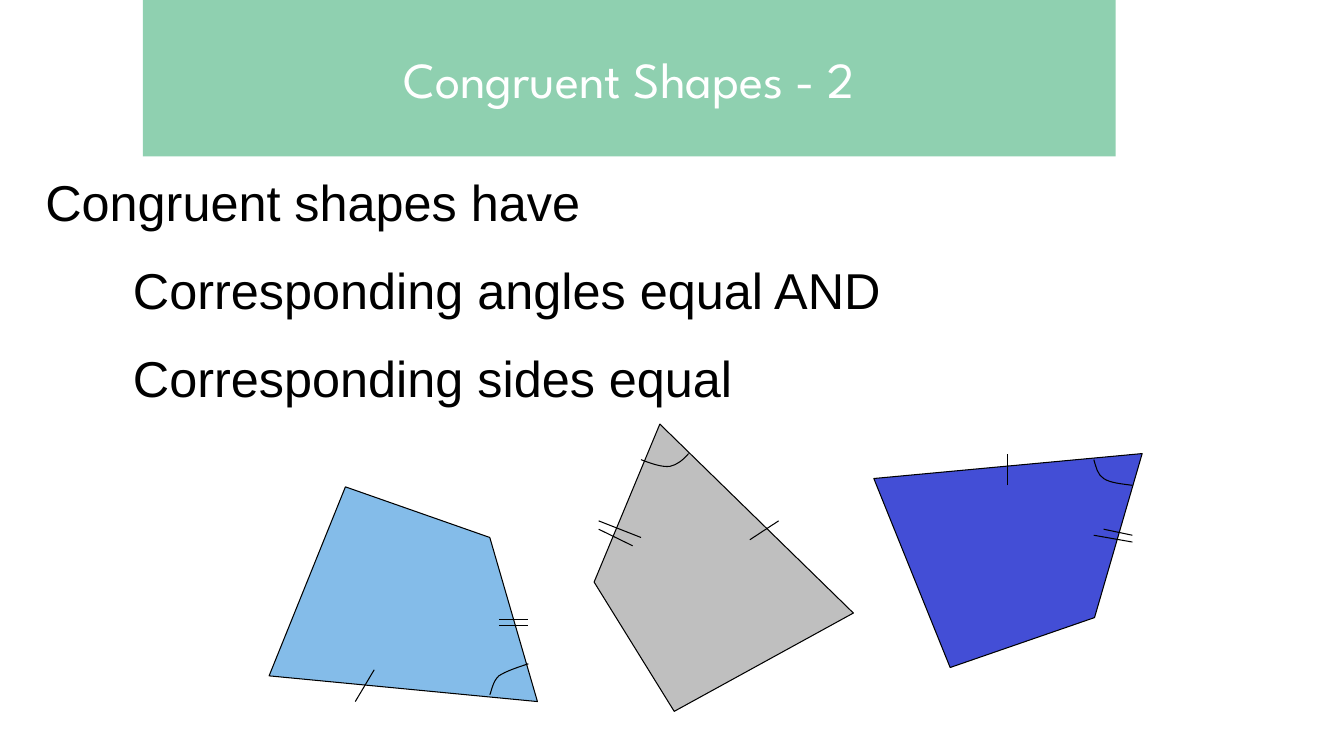
"""Build a slide on congruent shapes."""
import pptx
import pptx.dml.color
import pptx.enum.shapes
import pptx.enum.text
import pptx.oxml.ns
import pptx.util
import lxml.etree

Inches = pptx.util.Inches
Pt = pptx.util.Pt
qn = pptx.oxml.ns.qn
ALIGN = pptx.enum.text.PP_ALIGN

FIGURES = [
    dict(
        fill="50A0E1", alpha=70,
        corners=[(4.57, 6.44), (3.56, 8.94), (7.11, 9.28), (6.48, 7.11)],
        ticks=[(4.95, 8.86, 4.7, 9.28), (6.6, 8.19, 6.99, 8.19),
               (6.6, 8.28, 6.99, 8.28)],
        arc=[(6.99, 8.78), (6.84, 8.83), (6.69, 8.88), (6.6, 8.94),
             (6.52, 9.01), (6.5, 9.15), (6.48, 9.19)],
    ),
    dict(
        fill="BFBFBF", alpha=100,
        corners=[(8.92, 9.41), (11.29, 8.11), (8.73, 5.61), (7.86, 7.7)],
        ticks=[(9.92, 7.14, 10.3, 6.89), (7.92, 7, 8.37, 7.22),
               (7.92, 6.89, 8.48, 7.11)],
        arc=[(8.48, 6.08), (8.61, 6.13), (8.75, 6.18), (8.86, 6.17),
             (8.96, 6.15), (9.04, 6.08), (9.11, 6)],
    ),
    dict(
        fill="434ED6", alpha=100,
        corners=[(12.57, 8.83), (11.56, 6.33), (15.11, 6), (14.48, 8.17)],
        ticks=[(13.33, 6.42), (14.6, 7, 14.98, 7.08),
               (14.47, 7.08, 14.98, 7.17)],
        arc=[(14.47, 6.08), (14.5, 6.18), (14.52, 6.28), (14.6, 6.33),
             (14.69, 6.39), (14.84, 6.4), (14.98, 6.42)],
    ),
]
FIGURES[2]["ticks"][0] = (13.33, 6.42, 13.33, 6)


def color(code):
    """Turn a hex string into a colour."""
    return pptx.dml.color.RGBColor.from_string(code)


def paint(shape, code, alpha=100):
    """Fill a shape with a colour of the given opacity."""
    shape.fill.solid()
    shape.fill.fore_color.rgb = color(code)
    if alpha < 100:
        tone = shape.fill._xPr.find(".//" + qn("a:srgbClr"))
        lxml.etree.SubElement(tone, qn("a:alpha")).set("val", str(alpha * 1000))


def ink(shape):
    """Give a shape a thin black line."""
    shape.line.color.rgb = color("000000")
    shape.line.width = Pt(1)


def write(shape, text, font="Arial", size=48, code="000000",
          align=ALIGN.LEFT, indent=0, gap=0):
    """Add one formatted paragraph to a shape."""
    frame = shape.text_frame
    para = frame.paragraphs[0] if not frame.text else frame.add_paragraph()
    para.alignment = align
    para.space_before = Pt(gap)
    para._p.get_or_add_pPr().set("marL", str(Inches(indent)))
    run = para.add_run()
    run.text = text
    run.font.name = font
    run.font.size = Pt(size)
    run.font.color.rgb = color(code)


def setup(shape):
    """Set the wrap, anchor and margins of a text shape."""
    frame = shape.text_frame
    frame.word_wrap = True
    frame.vertical_anchor = pptx.enum.text.MSO_ANCHOR.MIDDLE
    for side in ("left", "top", "right", "bottom"):
        setattr(frame, "margin_" + side, Inches(0.04))


def outline(shapes, points, close):
    """Draw a black outline through points in inches."""
    first, *rest = [(Inches(x), Inches(y)) for x, y in points]
    build = shapes.build_freeform(*first, scale=1.0)
    build.add_line_segments(rest, close=close)
    shape = build.convert_to_shape()
    shape.shadow.inherit = False
    ink(shape)
    return shape


def curve(shapes, points):
    """Draw an open curve from a start and triples of Bezier points."""
    shape = outline(shapes, points, False)
    shape.fill.background()
    trail = shape._element.find(".//" + qn("a:path"))
    steps = trail.findall(qn("a:lnTo"))
    for start in range(0, len(steps), 3):
        bend = lxml.etree.SubElement(trail, qn("a:cubicBezTo"))
        for step in steps[start:start + 3]:
            bend.append(step[0])
            trail.remove(step)


def tick(shapes, ends):
    """Draw a straight mark across a side."""
    line = shapes.add_connector(
        pptx.enum.shapes.MSO_CONNECTOR.STRAIGHT, *map(Inches, ends))
    ink(line)
    lxml.etree.SubElement(line._element.spPr, qn("a:effectLst"))


def figure(slide, fill, alpha, corners, ticks, arc):
    """Draw a grouped four-sided shape with its side and angle marks."""
    shapes = slide.shapes.add_group_shape().shapes
    paint(outline(shapes, corners, True), fill, alpha)
    for ends in ticks:
        tick(shapes, ends)
    curve(shapes, arc)


def title(slide, text):
    """Draw the title band."""
    band = slide.shapes.add_shape(
        pptx.enum.shapes.MSO_SHAPE.RECTANGLE,
        Inches(1.89), 0, Inches(12.87), Inches(2.07))
    band.shadow.inherit = False
    band.line.fill.background()
    paint(band, "8FD0B0")
    setup(band)
    write(band, text, font="League Spartan", code="FFFFFF", align=ALIGN.CENTER)


def body(slide):
    """Write the rule for congruent shapes."""
    box = slide.shapes.add_textbox(
        Inches(0.56), Inches(2.19), Inches(14.83), Inches(3.28))
    setup(box)
    write(box, "Congruent shapes have")
    for text in ("Corresponding angles equal AND", "Corresponding sides equal"):
        write(box, text, indent=1.16, gap=26)


def main():
    """Build and save the slide."""
    deck = pptx.Presentation()
    deck.slide_width = Inches(17.78)
    deck.slide_height = Inches(10)
    slide = deck.slides.add_slide(deck.slide_layouts[6])
    title(slide, "Congruent Shapes - 2")
    body(slide)
    for parts in FIGURES:
        figure(slide, **parts)
    deck.save("out.pptx")


if __name__ == "__main__":
    main()
